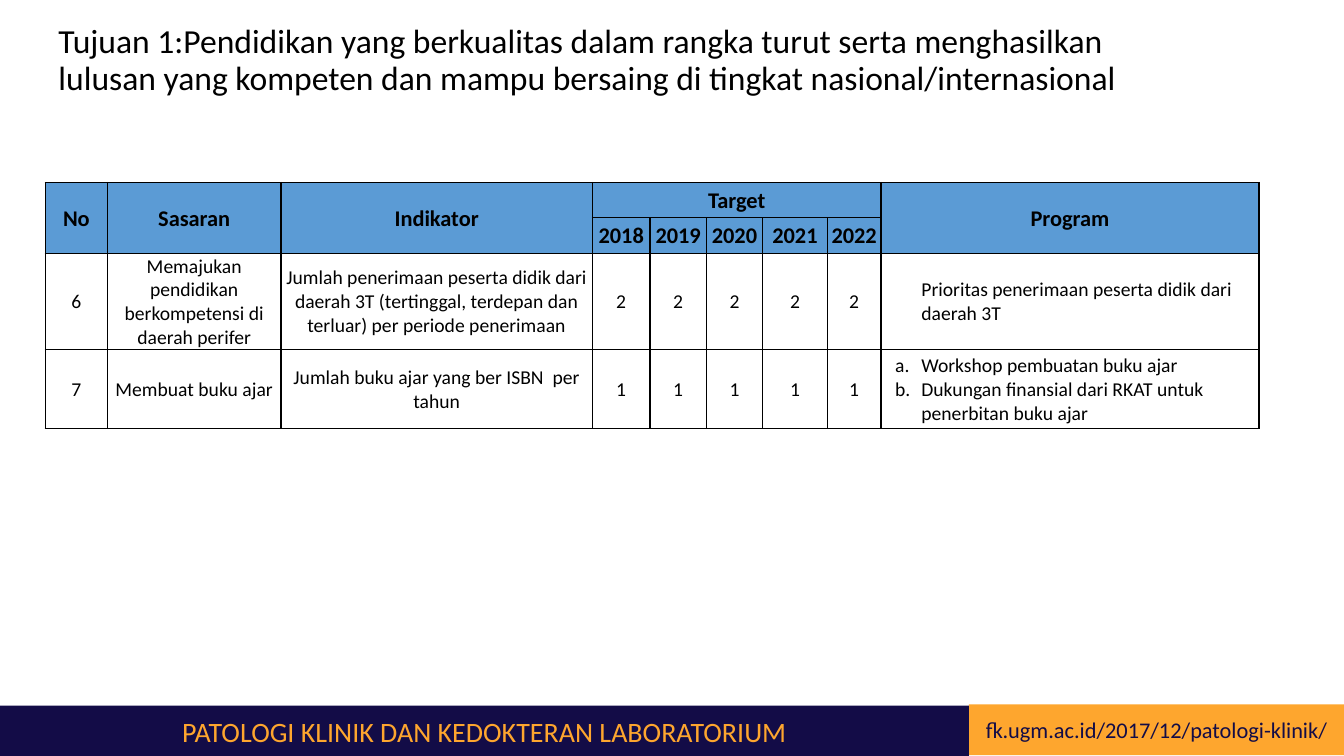
from lxml import etree
from pptx import Presentation
from pptx.dml.color import RGBColor
from pptx.enum import shapes, text
from pptx.oxml import ns
from pptx.util import Cm, Pt

COLORS = {"ink": "000000", "paper": "FFFFFF", "header": "5B9BD5",
          "navy": "130C47", "orange": "FEA62E"}
COLUMN_WIDTHS = [1.57, 4.37, 7.85, 1.45, 1.42, 1.42, 1.63, 1.35, 9.53]
ROW_HEIGHTS = [0.89, 0.89, 1.98, 1.98]
HEADER_ROWS = 2
PROGRAM_COLUMN = 8
ROWS = [
    ["No", "Sasaran", "Indikator", "Target", "", "", "", "", "Program"],
    ["", "", "", "2018", "2019", "2020", "2021", "2022", ""],
    ["6", "Memajukan pendidikan berkompetensi di daerah perifer",
     "Jumlah penerimaan peserta didik dari daerah 3T (tertinggal, terdepan dan terluar) "
     "per periode penerimaan",
     *["2"] * 5, "Prioritas penerimaan peserta didik dari daerah 3T"],
    ["7", "Membuat buku ajar", "Jumlah buku ajar yang ber ISBN  per tahun",
     *["1"] * 5,
     "Workshop pembuatan buku ajar\nDukungan finansial dari RKAT untuk penerbitan buku ajar"],
]


def color(name):
    return RGBColor.from_string(COLORS[name])


def style_font(para, size, name, bold=False):
    para.font.name = "Calibri"
    para.font.size = Pt(size)
    para.font.bold = bold
    para.font.color.rgb = color(name)


def add_borders(cell):
    properties = cell._tc.get_or_add_tcPr()
    for index, side in enumerate(("lnL", "lnR", "lnT", "lnB")):
        line = etree.Element(ns.qn(f"a:{side}"), w=str(Pt(1)))
        fill = etree.SubElement(line, ns.qn("a:solidFill"))
        etree.SubElement(fill, ns.qn("a:srgbClr"), val=COLORS["ink"])
        properties.insert(index, line)


def indent_program(para, lettered):
    properties = para._p.get_or_add_pPr()
    properties.set("marL", str(Cm(0.99)))
    properties.set("indent", str(Cm(-0.66 if lettered else 0)))
    if lettered:
        etree.SubElement(properties, ns.qn("a:buAutoNum"), type="alphaLcPeriod")


def fill_cell(cell, words, is_header, is_program):
    cell.fill.solid()
    cell.fill.fore_color.rgb = color("header" if is_header else "paper")
    add_borders(cell)
    cell.vertical_anchor = text.MSO_ANCHOR.MIDDLE
    cell.margin_left = cell.margin_right = cell.margin_top = Cm(0.03)
    cell.margin_bottom = 0
    cell.text = words
    paras = cell.text_frame.paragraphs
    for para in paras:
        if is_program and not is_header:
            para.alignment = text.PP_ALIGN.LEFT
            indent_program(para, len(paras) > 1)
        else:
            para.alignment = text.PP_ALIGN.CENTER
        style_font(para, 16 if is_header else 14, "ink", is_header)


def place_title(page, left, top, width, height):
    title = page.shapes.title
    title.left, title.top, title.width, title.height = map(Cm, (left, top, width, height))
    frame = title.text_frame
    frame.text = ("Tujuan 1:Pendidikan yang berkualitas dalam rangka turut serta menghasilkan "
                  "lulusan yang kompeten dan mampu bersaing di tingkat nasional/internasional")
    frame.word_wrap = True
    frame.auto_size = text.MSO_AUTO_SIZE.NONE
    frame.vertical_anchor = text.MSO_ANCHOR.MIDDLE
    para = frame.paragraphs[0]
    para.alignment = text.PP_ALIGN.LEFT
    para.line_spacing = 0.9
    style_font(para, 24, "ink")


def place_targets(page, left, top):
    table = page.shapes.add_table(
        len(ROWS), len(COLUMN_WIDTHS), Cm(left), Cm(top),
        Cm(sum(COLUMN_WIDTHS)), Cm(sum(ROW_HEIGHTS))).table
    table.first_row = table.horz_banding = False
    for column, width in zip(table.columns, COLUMN_WIDTHS):
        column.width = Cm(width)
    for row, height in zip(table.rows, ROW_HEIGHTS):
        row.height = Cm(height)
    for row, entries in enumerate(ROWS):
        for column, words in enumerate(entries):
            fill_cell(table.cell(row, column), words,
                      row < HEADER_ROWS, column == PROGRAM_COLUMN)
    for column in (0, 1, 2, PROGRAM_COLUMN):
        table.cell(0, column).merge(table.cell(1, column))
    table.cell(0, 3).merge(table.cell(0, 7))


def place_banner(page, box, words, size, fill, ink):
    banner = page.shapes.add_shape(shapes.MSO_SHAPE.RECTANGLE, *map(Cm, box))
    banner.shadow.inherit = False
    banner.fill.solid()
    banner.fill.fore_color.rgb = color(fill)
    banner.line.fill.background()
    frame = banner.text_frame
    frame.text = words
    frame.word_wrap = True
    frame.vertical_anchor = text.MSO_ANCHOR.MIDDLE
    para = frame.paragraphs[0]
    para.alignment = text.PP_ALIGN.CENTER
    style_font(para, size, ink)


def place_footer(page, top, width, height):
    split = 24.42
    place_banner(page, (split, top - 0.03, width - split, height),
                 "fk.ugm.ac.id/2017/12/patologi-klinik/", 16, "orange", "navy")
    place_banner(page, (0, top, split, height),
                 "PATOLOGI KLINIK DAN KEDOKTERAN LABORATORIUM", 20, "navy", "orange")


def main():
    deck = Presentation()
    deck.slide_width, deck.slide_height = Cm(33.87), Cm(19.05)
    page = deck.slides.add_slide(deck.slide_layouts[5])
    page.background.fill.solid()
    page.background.fill.fore_color.rgb = color("paper")
    place_title(page, 1.22, 0.64, 29.21, 1.8)
    place_targets(page, 1.14, 4.6)
    place_footer(page, 17.78, 33.87, 1.28)
    deck.save("out.pptx")


if __name__ == "__main__":
    main()
